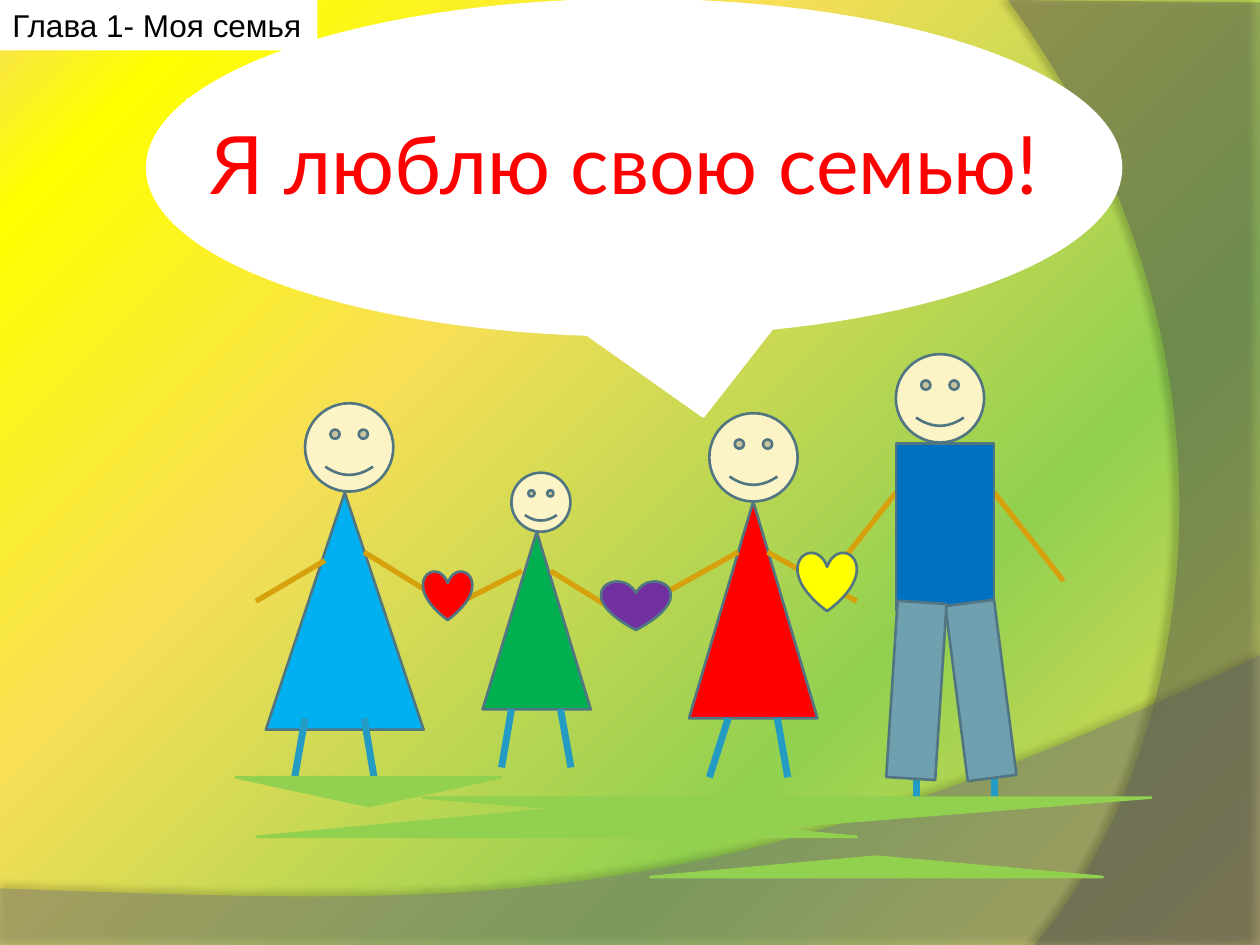
import dataclasses

import pptx
import pptx.dml.color
import pptx.enum.shapes
import pptx.enum.text
import pptx.oxml
import pptx.oxml.ns
import pptx.util

Cm = pptx.util.Cm
Pt = pptx.util.Pt
SHAPE = pptx.enum.shapes.MSO_SHAPE
qn = pptx.oxml.ns.qn
NAMESPACE = pptx.oxml.ns.nsdecls("a")


@dataclasses.dataclass(frozen=True)
class Theme:
    white: str = "FFFFFF"
    black: str = "000000"
    red: str = "FF0000"
    yellow: str = "FFFF00"
    sand: str = "F7DF56"
    grass: str = "92D050"
    skin: str = "FCF4C7"
    outline: str = "517682"
    arm: str = "D6A10C"
    leg: str = "239BC2"
    light_blue: str = "00B0F0"
    green: str = "00B050"
    purple: str = "7030A0"
    shirt: str = "0070C0"
    trousers: str = "6EA0B0"
    lower_wave: str = "7F7F7F"
    side_wave: str = "5E5E5E"
    title_font: str = "Lato"
    label_font: str = "Arial"
    title_size: int = 46
    label_size: int = 18
    outline_width: float = 1.5
    arm_width: int = 3
    leg_width: int = 4


THEME = Theme()


def rgb(color):
    return pptx.dml.color.RGBColor.from_string(color)


def paint_background(slide):
    """Radial gradient centred on the bottom right corner."""
    stops = ((0, THEME.sand), (30, THEME.grass), (65, THEME.sand),
             (90, THEME.yellow), (100, THEME.sand))
    stop_xml = "".join(
        f'<a:gs pos="{position * 1000}"><a:srgbClr val="{color}"/></a:gs>'
        for position, color in stops)
    gradient = pptx.oxml.parse_xml(
        f'<a:gradFill {NAMESPACE} rotWithShape="1"><a:gsLst>{stop_xml}</a:gsLst>'
        '<a:path path="circle"><a:fillToRect l="100000" t="100000"/></a:path>'
        '</a:gradFill>')
    slide.background.fill.solid()
    properties = slide._element.find(".//" + qn("p:bgPr"))
    properties.replace(properties[0], gradient)


def curve_points(start, control_1, control_2, end, steps=40):
    """Points along a cubic curve, without its start."""
    points = []
    for step in range(1, steps + 1):
        t = step / steps
        weights = ((1 - t) ** 3, 3 * t * (1 - t) ** 2, 3 * t * t * (1 - t), t ** 3)
        points.append(tuple(
            sum(weight * value for weight, value in zip(weights, values))
            for values in zip(start, control_1, control_2, end)))
    return points


def add_wave(slide, corners, curve, color, opacity, shadow):
    """Translucent area: straight corners, then a curve from the last one."""
    points = [(Cm(x), Cm(y)) for x, y in corners + curve_points(corners[-1], *curve)]
    builder = slide.shapes.build_freeform(*points[0], scale=1.0)
    builder.add_line_segments(points[1:], close=True)
    shape = builder.convert_to_shape()
    shape.fill.solid()
    shape.fill.fore_color.rgb = rgb(color)
    shape.line.fill.background()
    properties = shape._element.spPr
    properties.find(".//" + qn("a:srgbClr")).append(
        pptx.oxml.parse_xml(f'<a:alpha {NAMESPACE} val="{opacity * 1000}"/>'))
    shadow_opacity, distance, degrees = shadow
    properties.append(pptx.oxml.parse_xml(
        f'<a:effectLst {NAMESPACE}><a:outerShdw blurRad="{Pt(4)}" '
        f'dist="{Pt(distance)}" dir="{degrees * 60000}" algn="ctr" rotWithShape="0">'
        f'<a:srgbClr val="{THEME.black}"><a:alpha val="{shadow_opacity * 1000}"/>'
        '</a:srgbClr></a:outerShdw></a:effectLst>'))


def add_figure(slide, kind, box, color, line=THEME.outline, rotation=0, flip=None):
    shape = slide.shapes.add_shape(kind, *map(Cm, box))
    shape.shadow.inherit = False
    shape.fill.solid()
    shape.fill.fore_color.rgb = rgb(color)
    shape.line.color.rgb = rgb(line)
    shape.line.width = Pt(THEME.outline_width)
    shape.rotation = rotation
    if flip:
        shape._element.spPr.find(qn("a:xfrm")).set(flip, "1")
    return shape


def add_limbs(slide, limbs, color, width):
    for limb in limbs:
        connector = slide.shapes.add_connector(
            pptx.enum.shapes.MSO_CONNECTOR.STRAIGHT, *map(Cm, limb))
        connector.line.color.rgb = rgb(color)
        connector.line.width = Pt(width)
        connector._element.spPr.append(
            pptx.oxml.parse_xml(f"<a:effectLst {NAMESPACE}/>"))


def add_head(slide, left, top, size):
    add_figure(slide, SHAPE.SMILEY_FACE, (left, top, size, size), THEME.skin)


def add_girl(slide, head, dress, color, legs, arms):
    add_head(slide, *head)
    add_figure(slide, SHAPE.ISOSCELES_TRIANGLE, dress, color)
    add_limbs(slide, legs, THEME.leg, THEME.leg_width)
    add_limbs(slide, arms, THEME.arm, THEME.arm_width)


def add_father(slide):
    add_head(slide, 18.06, 7.14, 1.78)
    add_limbs(slide, [(16.66, 11.71, 18.06, 9.93), (20.04, 9.93, 21.44, 11.71)],
              THEME.arm, THEME.arm_width)
    add_figure(slide, SHAPE.RECTANGLE, (18.06, 8.94, 1.98, 3.38), THEME.shirt)
    add_limbs(slide, [(x, 15.67, x, 16.08) for x in (18.47, 20.04)],
              THEME.leg, THEME.leg_width)
    for left, rotation in ((19.28, 352.7), (17.98, 3.7)):
        add_figure(slide, SHAPE.RECTANGLE, (left, 12.14, 0.99, 3.56),
                   THEME.trousers, rotation=rotation)


def add_text(slide, box, text, font, size, color):
    shape = slide.shapes.add_textbox(*map(Cm, box))
    shape.fill.solid()
    shape.fill.fore_color.rgb = rgb(THEME.white)
    shape.text_frame.text = text
    run = shape.text_frame.paragraphs[0].runs[0]
    run.font.name = font
    run.font.size = Pt(size)
    run.font.color.rgb = rgb(color)
    return shape.text_frame


def add_speech(slide):
    callout = add_figure(slide, SHAPE.OVAL_CALLOUT, (2.97, 0, 19.63, 6.76),
                         THEME.white, THEME.white, flip="flipH")
    callout.adjustments[0] = -0.071
    callout.adjustments[1] = 0.742
    frame = add_text(slide, (3.76, 1.98, 17.65, 2.59), "Я люблю свою семью!",
                     THEME.title_font, THEME.title_size, THEME.red)
    frame.word_wrap = True
    frame.vertical_anchor = pptx.enum.text.MSO_ANCHOR.MIDDLE
    frame.margin_left = frame.margin_right = Cm(0.13)
    frame.paragraphs[0].alignment = pptx.enum.text.PP_ALIGN.CENTER


def main():
    presentation = pptx.Presentation()
    presentation.slide_width, presentation.slide_height = Cm(25.4), Cm(19.05)
    slide = presentation.slides.add_slide(presentation.slide_layouts[6])

    # Backdrop
    paint_background(slide)
    add_wave(slide, [(0, 17.91), (0, 19.08), (25.4, 19.08), (25.4, 13.21)],
             [(14.2, 18.52), (9.93, 18.26), (0, 17.91)],
             THEME.lower_wave, 45, (35, 3.5, 270))
    add_wave(slide, [(20.32, 0), (25.4, 0.05), (25.4, 19.05), (20.85, 19.05)],
             [(23.75, 15.72), (25.86, 7.62), (20.32, 0)],
             THEME.side_wave, 40, (45, 4, 180))
    add_speech(slide)

    # Family
    add_girl(slide, (6.15, 8.13, 1.78), (5.36, 9.93, 3.18, 4.78), THEME.light_blue,
             [(7.34, 14.48, 7.54, 15.67), (6.15, 14.48, 5.94, 15.67)],
             [(7.34, 11.13, 8.94, 12.12), (5.16, 12.12, 6.55, 11.3)])
    add_girl(slide, (10.31, 9.53, 1.19), (9.73, 10.72, 2.18, 3.58), THEME.green,
             [(10.31, 14.3, 10.11, 15.47), (11.3, 14.3, 11.51, 15.47)],
             [(9.32, 12.12, 10.52, 11.51), (11.1, 11.51, 12.7, 12.5)])
    add_girl(slide, (14.3, 8.33, 1.78), (13.89, 10.11, 2.59, 4.37), THEME.red,
             [(14.68, 14.48, 14.3, 15.67), (15.67, 14.48, 15.88, 15.67)],
             [(13.11, 12.12, 14.88, 11.13), (15.47, 11.13, 17.27, 12.12)])
    add_father(slide)

    # Hearts between the hands
    for box, color in (((8.53, 11.51, 0.99, 0.99), THEME.red),
                       ((12.12, 11.71, 1.4, 0.99), THEME.purple),
                       ((16.08, 11.13, 1.19, 1.19), THEME.yellow)):
        add_figure(slide, SHAPE.HEART, box, color)

    # Grass
    for box, flip in (((4.75, 15.67, 5.36, 0.58), "flipV"),
                      ((5.18, 16.31, 12.09, 0.56), None),
                      ((8.53, 16.08, 14.68, 0.58), "flipV"),
                      ((13.11, 17.27, 9.12, 0.41), None)):
        add_figure(slide, SHAPE.ISOSCELES_TRIANGLE, box, THEME.grass,
                   THEME.grass, flip=flip)

    # Chapter label
    label = add_text(slide, (0, 0, 6.4, 1.02), "Глава 1- Моя семья",
                     THEME.label_font, THEME.label_size, THEME.black)
    label.word_wrap = False
    label.auto_size = pptx.enum.text.MSO_AUTO_SIZE.SHAPE_TO_FIT_TEXT

    presentation.save("out.pptx")


if __name__ == "__main__":
    main()
